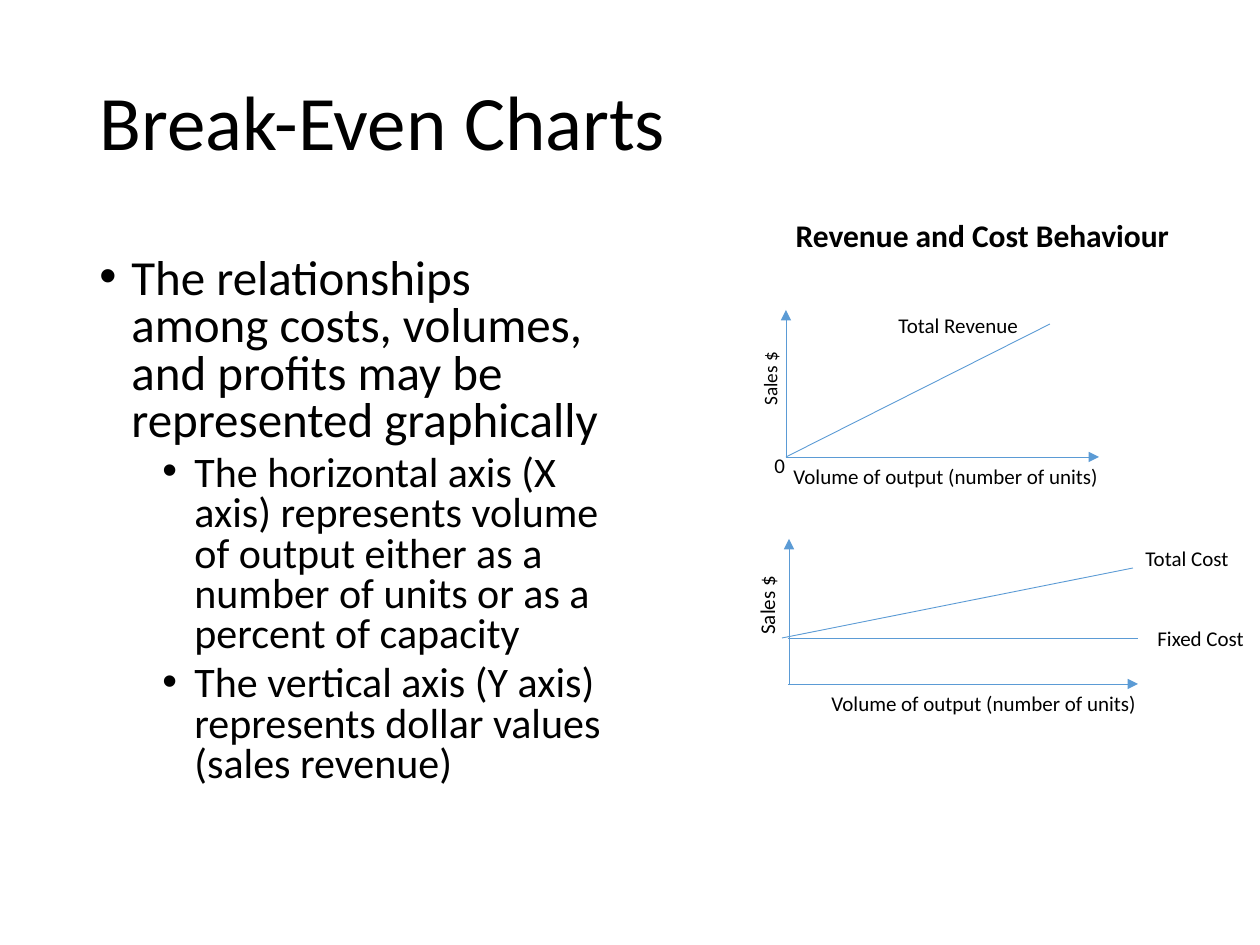
from dataclasses import dataclass

import pptx
import pptx.dml.color
import pptx.enum.shapes
import pptx.enum.text
import pptx.oxml.ns
import pptx.util
from lxml import etree

PX_PER_INCH = 126
TOP = pptx.enum.text.MSO_ANCHOR.TOP
MIDDLE = pptx.enum.text.MSO_ANCHOR.MIDDLE
LEFT = pptx.enum.text.PP_ALIGN.LEFT
CENTER = pptx.enum.text.PP_ALIGN.CENTER


@dataclass(frozen=True)
class Theme:
    font: str = "Calibri"
    ink: str = "000000"
    axis: str = "5B9BD5"
    axis_width: float = 0.5
    title: int = 44
    point: int = 28
    subpoint: int = 24
    heading: int = 18
    label: int = 12
    small_label: int = 11


@dataclass(frozen=True)
class Box:
    left: int
    top: int
    width: int
    height: int


@dataclass(frozen=True)
class Line:
    x1: int
    y1: int
    x2: int
    y2: int
    arrow: bool = False


@dataclass(frozen=True)
class Label:
    text: str
    box: Box
    size: int
    rotation: int = 0


@dataclass(frozen=True)
class Point:
    text: str
    size: int
    indent: int
    space_before: int


THEME = Theme()
HANGING = 32
VOLUME = "Volume of output (number of units)"

POINTS = [
    Point("The relationships among costs, volumes, and profits may be "
          "represented graphically", THEME.point, 32, 10),
    Point("The horizontal axis (X axis) represents volume of output either as "
          "a number of units or as a percent of capacity", THEME.subpoint, 95, 5),
    Point("The vertical axis (Y axis) represents dollar values (sales revenue)",
          THEME.subpoint, 95, 5),
]

REVENUE_LINES = [
    Line(786, 457, 786, 310, arrow=True),
    Line(786, 457, 1099, 457, arrow=True),
    Line(786, 457, 1050, 324),
]
REVENUE_LABELS = [
    Label("Sales $", Box(731, 360, 79, 37), THEME.small_label, 270),
    Label("0", Box(762, 446, 37, 38), THEME.label),
    Label("Total Revenue", Box(886, 306, 146, 38), THEME.label),
    Label(VOLUME, Box(781, 457, 333, 38), THEME.label),
]

COST_LINES = [
    Line(789, 684, 789, 539, arrow=True),
    Line(788, 684, 1138, 684, arrow=True),
    Line(788, 638, 1138, 638),
    Line(782, 638, 1133, 568),
]
COST_LABELS = [
    Label("Sales $", Box(725, 586, 84, 38), THEME.label, 270),
    Label("Total Cost", Box(1133, 539, 110, 38), THEME.label),
    Label("Fixed Cost", Box(1145, 619, 113, 38), THEME.label),
    Label(VOLUME, Box(819, 684, 333, 38), THEME.label),
]


def px(length: int) -> int:
    return pptx.util.Emu(round(length * 914400 / PX_PER_INCH))


def place(shape, box: Box) -> None:
    shape.left, shape.top = px(box.left), px(box.top)
    shape.width, shape.height = px(box.width), px(box.height)


def add_box(slide, box: Box):
    return slide.shapes.add_textbox(
        px(box.left), px(box.top), px(box.width), px(box.height))


def prepare_frame(frame, *, wrap: bool = True, anchor=TOP) -> None:
    fit = pptx.enum.text.MSO_AUTO_SIZE
    frame.word_wrap = wrap
    frame.auto_size = fit.NONE if wrap else fit.SHAPE_TO_FIT_TEXT
    frame.vertical_anchor = anchor


def write(paragraph, text: str, *, size: int, bold: bool = False, align=LEFT,
          line_spacing: float = 1.0, space_before: int = 0) -> None:
    paragraph.alignment = align
    paragraph.line_spacing = line_spacing
    paragraph.space_before = pptx.util.Pt(space_before)
    run = paragraph.add_run()
    run.text = text
    run.font.name = THEME.font
    run.font.size = pptx.util.Pt(size)
    run.font.bold = bold
    run.font.color.rgb = pptx.dml.color.RGBColor.from_string(THEME.ink)


def add_bullet(paragraph, indent: int) -> None:
    properties = paragraph._p.get_or_add_pPr()
    properties.set("marL", str(px(indent)))
    properties.set("indent", str(-px(HANGING)))
    qn = pptx.oxml.ns.qn
    etree.SubElement(properties, qn("a:buFont"), typeface="Arial")
    etree.SubElement(properties, qn("a:buChar"), char="•")


def draw_line(slide, line: Line) -> None:
    connector = slide.shapes.add_connector(
        pptx.enum.shapes.MSO_CONNECTOR.STRAIGHT,
        px(line.x1), px(line.y1), px(line.x2), px(line.y2))
    connector.line.color.rgb = pptx.dml.color.RGBColor.from_string(THEME.axis)
    connector.line.width = pptx.util.Pt(THEME.axis_width)
    qn = pptx.oxml.ns.qn
    if line.arrow:
        etree.SubElement(connector.line._get_or_add_ln(), qn("a:tailEnd"),
                         type="triangle")
    etree.SubElement(connector._element.spPr, qn("a:effectLst"))


def draw_label(slide, label: Label) -> None:
    shape = add_box(slide, label.box)
    shape.rotation = label.rotation
    prepare_frame(shape.text_frame, wrap=False)
    write(shape.text_frame.paragraphs[0], label.text, size=label.size)


def draw_graph(slide, lines: list[Line], labels: list[Label]) -> None:
    for line in lines:
        draw_line(slide, line)
    for label in labels:
        draw_label(slide, label)


def main() -> None:
    deck = pptx.Presentation()
    deck.slide_width, deck.slide_height = px(1260), px(945)
    slide = deck.slides.add_slide(deck.slide_layouts.get_by_name("Title Only"))

    # Title
    title = slide.shapes.title
    place(title, Box(87, 50, 1086, 152))
    prepare_frame(title.text_frame, anchor=MIDDLE)
    write(title.text_frame.paragraphs[0], "Break-Even Charts",
          size=THEME.title, line_spacing=0.9)

    # Explanation
    explanation = add_box(slide, Box(87, 252, 536, 600)).text_frame
    prepare_frame(explanation)
    for index, point in enumerate(POINTS):
        paragraph = explanation.add_paragraph() if index else explanation.paragraphs[0]
        write(paragraph, point.text, size=point.size, line_spacing=0.8,
              space_before=point.space_before)
        add_bullet(paragraph, point.indent)

    # Revenue and cost graphs
    draw_graph(slide, REVENUE_LINES, REVENUE_LABELS)
    draw_graph(slide, COST_LINES, COST_LABELS)

    # Heading over the graphs
    heading = add_box(slide, Box(721, 214, 523, 59)).text_frame
    prepare_frame(heading)
    write(heading.paragraphs[0], "Revenue and Cost Behaviour", size=THEME.heading,
          bold=True, align=CENTER, line_spacing=0.9, space_before=10)

    deck.save("out.pptx")


if __name__ == "__main__":
    main()
